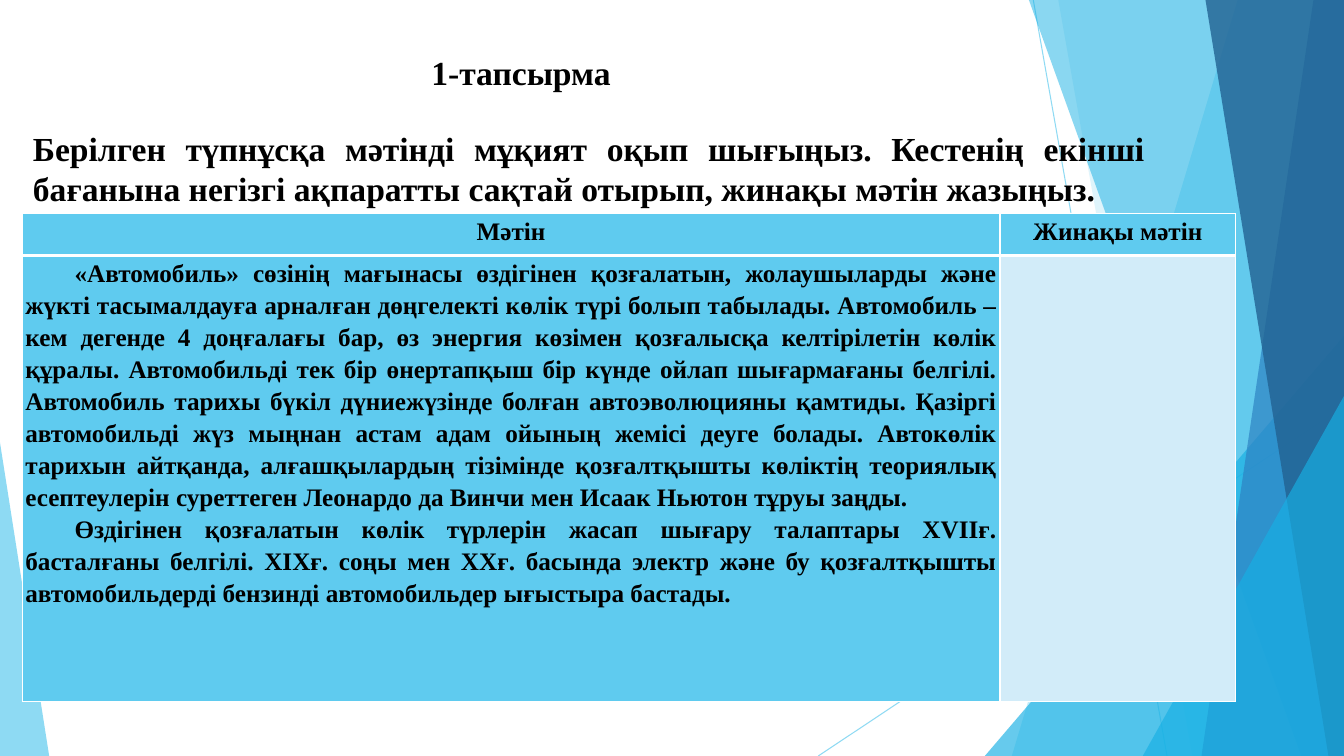
import pptx
import pptx.util
import pptx.dml.color
import pptx.enum.shapes
import pptx.enum.text
import pptx.oxml.ns
import lxml.etree

Cm, Pt = pptx.util.Cm, pptx.util.Pt
ALIGN = pptx.enum.text.PP_ALIGN
qn = pptx.oxml.ns.qn

TASK = "1-тапсырма"
INSTRUCTION = ("Берілген түпнұсқа мәтінді мұқият оқып шығыңыз. Кестенің екінші бағанына "
               "негізгі ақпаратты сақтай отырып, жинақы мәтін жазыңыз.")
HEADINGS = ["Мәтін", "Жинақы мәтін"]
PASSAGE = [
    "«Автомобиль» сөзінің мағынасы өздігінен қозғалатын, жолаушыларды және жүкті "
    "тасымалдауға арналған дөңгелекті көлік түрі болып табылады. Автомобиль – кем дегенде "
    "4 доңғалағы бар, өз энергия көзімен қозғалысқа келтірілетін көлік құралы. Автомобильді "
    "тек бір өнертапқыш бір күнде ойлап шығармағаны белгілі. Автомобиль тарихы бүкіл "
    "дүниежүзінде болған автоэволюцияны қамтиды. Қазіргі автомобильді жүз мыңнан астам адам "
    "ойының жемісі деуге болады. Автокөлік тарихын айтқанда, алғашқылардың тізімінде "
    "қозғалтқышты көліктің теориялық есептеулерін суреттеген Леонардо да Винчи мен Исаак "
    "Ньютон тұруы заңды. ",
    "Өздігінен қозғалатын көлік түрлерін жасап шығару талаптары XVIIғ. басталғаны белгілі. "
    "XIXғ. соңы мен XXғ. басында электр және бу қозғалтқышты автомобильдерді бензинді "
    "автомобильдер ығыстыра бастады. ",
]

WIDTH, HEIGHT = 33.87, 19.05
SKY, AZURE, PALE = "5FCBEF", "17B0E4", "D2ECF9"
RAYS = [(26.04, 0, 29.41, HEIGHT), (WIDTH, 10.24, 20.62, HEIGHT)]
# Bands reach the right edge: ("band", top x, bottom x, colour, opacity %)
# Wedges stand on the bottom edge: ("wedge", left, width, height, peak, colour, opacity %)
FACETS = [
    ("band", 31.19, 25.5, SKY, 36),
    ("band", 26.67, 30.05, SKY, 20),
    ("wedge", 24.82, 9.05, 10.59, 1, AZURE, 66),
    ("band", 25.93, 32.79, AZURE, 50),
    ("band", 33.1, 30.28, "2E83C3", 70),
    ("band", 30.38, 33.48, "226292", 80),
    ("wedge", 28.8, 5.07, 9.07, 1, AZURE, 66),
    ("wedge", 0, 1.24, 7.9, 0, SKY, 70),
]
COLUMNS, ROWS = [24.64, 5.94], [1.06, 11.24]


def rgb(value):
    return pptx.dml.color.RGBColor.from_string(value)


def set_opacity(shape, percent):
    for colour in shape._element.spPr.iter(qn("a:srgbClr")):
        lxml.etree.SubElement(colour, qn("a:alpha")).set("val", str(percent * 1000))


def write(frame, paragraphs, size=18, align=ALIGN.JUSTIFY, spacing=None, indent=0):
    frame.word_wrap = True
    for number, text in enumerate(paragraphs):
        paragraph = frame.add_paragraph() if number else frame.paragraphs[0]
        paragraph.alignment = align
        if spacing:
            paragraph.line_spacing = spacing
        if indent:
            properties = paragraph._p.get_or_add_pPr()
            properties.set("marL", "0")
            properties.set("indent", str(Cm(indent)))
        run = paragraph.add_run()
        run.text = text
        run.font.name = "Times New Roman"
        run.font.size = Pt(size)
        run.font.bold = True
        run.font.color.rgb = rgb("000000")


def set_borders(cell, **widths):
    properties = cell._tc.get_or_add_tcPr()
    for position, side in enumerate(("L", "R", "T", "B")):
        border = lxml.etree.Element(qn("a:ln" + side), w=str(Pt(widths.get(side, 1))))
        fill = lxml.etree.SubElement(border, qn("a:solidFill"))
        lxml.etree.SubElement(fill, qn("a:srgbClr")).set("val", "FFFFFF")
        properties.insert(position, border)


def add_ray(shapes, x1, y1, x2, y2):
    ray = shapes.add_connector(pptx.enum.shapes.MSO_CONNECTOR.STRAIGHT,
                               Cm(x1), Cm(y1), Cm(x2), Cm(y2))
    ray.line.color.rgb = rgb(SKY)
    ray.line.width = Pt(0.75)
    set_opacity(ray, 70)
    lxml.etree.SubElement(ray._element.spPr, qn("a:effectLst"))


def add_facet(shapes, kind, *geometry, colour, opacity):
    if kind == "band":
        top, bottom = geometry
        outline = shapes.build_freeform(Cm(top), 0)
        outline.add_line_segments([(Cm(WIDTH), 0), (Cm(WIDTH), Cm(HEIGHT)),
                                   (Cm(bottom), Cm(HEIGHT))])
        facet = outline.convert_to_shape()
    else:
        left, width, height, peak = geometry
        facet = shapes.add_shape(pptx.enum.shapes.MSO_SHAPE.ISOSCELES_TRIANGLE, Cm(left),
                                 Cm(HEIGHT - height), Cm(width), Cm(height))
        facet.adjustments[0] = peak
    facet.shadow.inherit = False
    facet.fill.solid()
    facet.fill.fore_color.rgb = rgb(colour)
    facet.line.fill.background()
    set_opacity(facet, opacity)


def add_task_table(shapes):
    table = shapes.add_table(2, 2, Cm(0.56), Cm(5.38), Cm(sum(COLUMNS)), Cm(sum(ROWS))).table
    for column, width in zip(table.columns, COLUMNS):
        column.width = Cm(width)
    for row, height in zip(table.rows, ROWS):
        row.height = Cm(height)
    for cell in table.iter_cells():
        cell.margin_left = cell.margin_right = Cm(0.08)
        cell.margin_top = cell.margin_bottom = 0
        cell.fill.solid()
        cell.fill.fore_color.rgb = rgb(SKY)
    for column, heading in enumerate(HEADINGS):
        write(table.cell(0, column).text_frame, [heading], align=ALIGN.CENTER, spacing=1.15)
        set_borders(table.cell(0, column), B=3)
        set_borders(table.cell(1, column), T=3)
    write(table.cell(1, 0).text_frame, PASSAGE, spacing=1.15, indent=1.24)
    table.cell(1, 1).fill.fore_color.rgb = rgb(PALE)


def main():
    deck = pptx.Presentation()
    deck.slide_width, deck.slide_height = Cm(WIDTH), Cm(HEIGHT)
    slide = deck.slides.add_slide(deck.slide_layouts[5])
    shapes = slide.shapes

    for ray in RAYS:
        add_ray(shapes, *ray)
    for *geometry, colour, opacity in FACETS:
        add_facet(shapes, *geometry, colour=colour, opacity=opacity)

    title = shapes.title
    shapes._spTree.append(title._element)  # bring in front of the facets
    title.left, title.top, title.width, title.height = Cm(1.19), Cm(1.17), Cm(23.88), Cm(3.66)
    title.text_frame.vertical_anchor = pptx.enum.text.MSO_ANCHOR.TOP
    title.text_frame.auto_size = pptx.enum.text.MSO_AUTO_SIZE.NONE
    write(title.text_frame, [TASK], size=24, align=ALIGN.CENTER)

    instruction = shapes.add_textbox(Cm(0.58), Cm(3.1), Cm(28.52), Cm(14.88))
    write(instruction.text_frame, [INSTRUCTION], size=24)
    add_task_table(shapes)
    deck.save("out.pptx")


if __name__ == "__main__":
    main()
